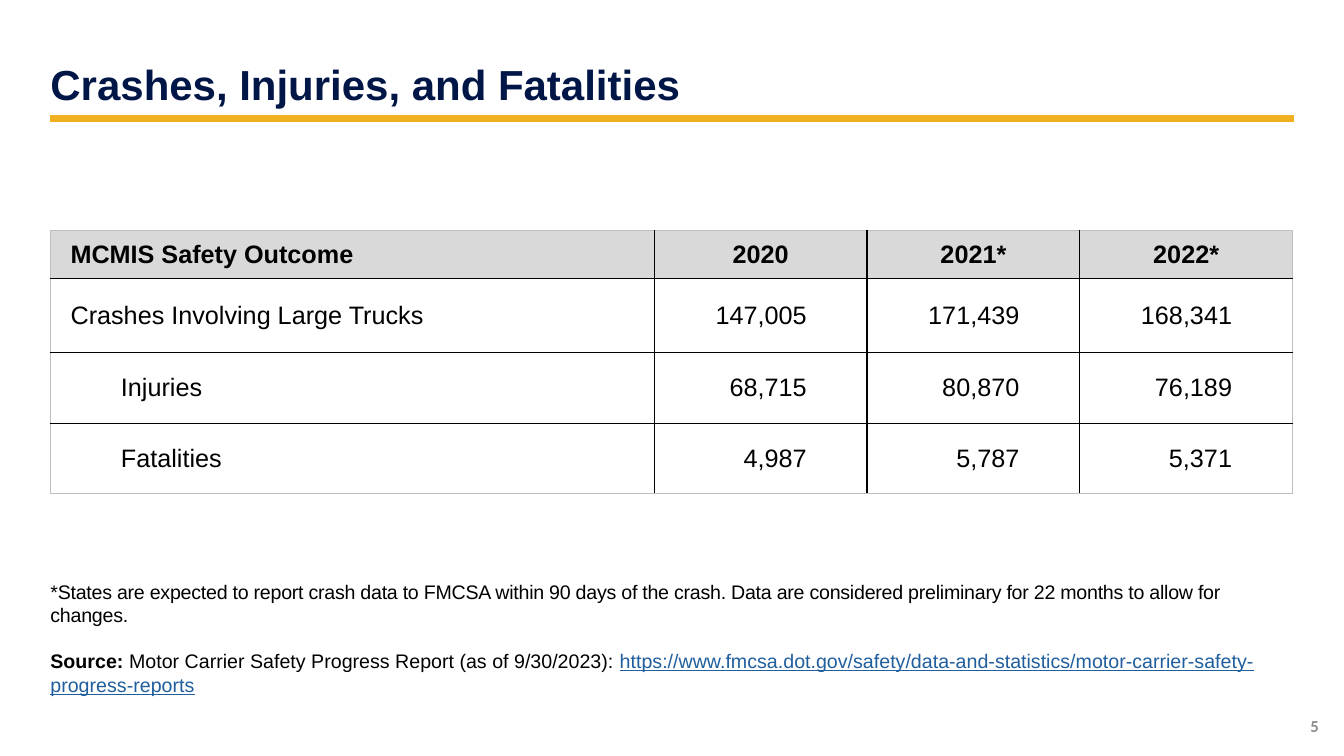
from dataclasses import dataclass

from lxml.etree import SubElement
from pptx import Presentation
from pptx.dml.color import RGBColor
from pptx.enum.shapes import MSO_CONNECTOR
from pptx.enum.text import MSO_ANCHOR, MSO_AUTO_SIZE, PP_ALIGN
from pptx.oxml.ns import qn
from pptx.util import Inches, Pt


@dataclass(frozen=True)
class Theme:
    navy: str = "001647"
    gold: str = "F1B01F"
    black: str = "000000"
    header: str = "D9D9D9"
    edge: str = "BFBFBF"
    link: str = "205E9E"
    number: str = "8C8C8C"
    font: str = "Arial"
    number_font: str = "Calibri"
    title_size: int = 30
    table_size: int = 18
    note_size: int = 14
    number_size: int = 12


theme = Theme()


def add_text(paragraph, text, size, color=theme.black, **font_format):
    run = paragraph.add_run()
    run.text = text
    run.font.color.rgb = RGBColor.from_string(color)
    for key, value in {"name": theme.font, "size": Pt(size), "bold": False, **font_format}.items():
        setattr(run.font, key, value)
    return run


def set_frame(target, insets, anchor):
    sides = ("margin_left", "margin_top", "margin_right", "margin_bottom")
    frame_format = dict(zip(sides, map(Inches, insets)), vertical_anchor=anchor)
    for key, value in frame_format.items():
        setattr(target, key, value)


presentation = Presentation()
presentation.slide_width = Inches(13.33)
presentation.slide_height = Inches(7.5)
slide = presentation.slides.add_slide(presentation.slide_layouts[5])
text_insets = (0, 0.05, 0.1, 0.05)

rule = slide.shapes.add_connector(
    MSO_CONNECTOR.STRAIGHT, Inches(0.5), Inches(1.18), Inches(12.83), Inches(1.18)
)
rule.line.color.rgb = RGBColor.from_string(theme.gold)
rule.line.width = Pt(5)
SubElement(rule.line._get_or_add_ln().getparent(), qn("a:effectLst"))

title = slide.shapes.title
title_place = {"left": 0.5, "top": 0.14, "width": 12.33, "height": 1}
for key, value in title_place.items():
    setattr(title, key, Inches(value))
title.text_frame.auto_size = MSO_AUTO_SIZE.NONE
set_frame(title.text_frame, text_insets, MSO_ANCHOR.BOTTOM)
heading = title.text_frame.paragraphs[0]
heading.alignment = PP_ALIGN.LEFT
heading.line_spacing = 0.9
add_text(heading, "Crashes, Injuries, and Fatalities", theme.title_size, theme.navy, bold=True)

outcomes = [
    ("MCMIS Safety Outcome", "2020", "2021*", "2022*"),
    ("Crashes Involving Large Trucks", "147,005", "171,439", "168,341"),
    ("Injuries", "68,715", "80,870", "76,189"),
    ("Fatalities", "4,987", "5,787", "5,371"),
]
column_widths = (5.99, 2.11, 2.11, 2.11)
row_heights = (0.47, 0.74, 0.7, 0.7)
last_row, last_column = len(row_heights) - 1, len(column_widths) - 1
table = slide.shapes.add_table(
    len(row_heights), len(column_widths),
    Inches(0.5), Inches(2.29), Inches(sum(column_widths)), Inches(sum(row_heights)),
).table
table.horz_banding = False
for column, width in zip(table.columns, column_widths):
    column.width = Inches(width)
for row, height in zip(table.rows, row_heights):
    row.height = Inches(height)

for r, record in enumerate(outcomes):
    for c, text in enumerate(record):
        cell = table.cell(r, c)
        is_header, is_label = r == 0, c == 0
        outer_edges = {"L": c == 0, "R": c == last_column, "T": r == 0, "B": r == last_row}
        for side, is_outer in outer_edges.items():
            border = SubElement(cell._tc.get_or_add_tcPr(), qn(f"a:ln{side}"), w=str(Pt(1)))
            border_fill = SubElement(border, qn("a:solidFill"))
            SubElement(border_fill, qn("a:srgbClr"), val=theme.edge if is_outer else theme.black)
        if is_header:
            cell.fill.solid()
            cell.fill.fore_color.rgb = RGBColor.from_string(theme.header)
            insets = (0.2 if is_label else 0.1, 0.05, 0.1, 0.05)
        else:
            cell.fill.background()
            insets = (0.2, 0.2, 0.2, 0.2) if is_label else (0.1, 0.2, 0.6, 0.2)
        set_frame(cell, insets, MSO_ANCHOR.MIDDLE)
        entry = cell.text_frame.paragraphs[0]
        if is_label:
            entry.alignment = PP_ALIGN.LEFT
        else:
            entry.alignment = PP_ALIGN.CENTER if is_header else PP_ALIGN.RIGHT
        if is_label and r > 1:
            entry.level = 1
            entry._p.get_or_add_pPr().set("marL", str(Inches(0.5)))
        add_text(entry, text, theme.table_size, bold=is_header)

notes = slide.shapes.add_textbox(
    Inches(0.5), Inches(5.7), Inches(12.49), Inches(1.51)
).text_frame
notes.word_wrap = True
set_frame(notes, text_insets, MSO_ANCHOR.TOP)
footnote = add_text(
    notes.paragraphs[0],
    "*States are expected to report crash data to FMCSA within 90 days of the crash. "
    "Data are considered preliminary for 22 months to allow for changes.",
    theme.note_size,
)
footnote.font._element.set("spc", "-20")
source = notes.add_paragraph()
source.space_before = Pt(16)
add_text(source, "Source: ", theme.note_size, bold=True)
add_text(source, "Motor Carrier Safety Progress Report (as of 9/30/2023): ", theme.note_size)
add_text(
    source,
    "https://www.fmcsa.dot.gov/safety/data-and-statistics/motor-carrier-safety-progress-reports",
    theme.note_size, theme.link, underline=True,
)

page = slide.shapes.add_textbox(Inches(12.58), Inches(7), Inches(0.6), Inches(0.4)).text_frame
page.word_wrap = True
set_frame(page, (0.1, 0.05, 0.1, 0.05), MSO_ANCHOR.MIDDLE)
page.paragraphs[0].alignment = PP_ALIGN.RIGHT
add_text(
    page.paragraphs[0], "5", theme.number_size, theme.number, name=theme.number_font, bold=True
)

presentation.save("out.pptx")
